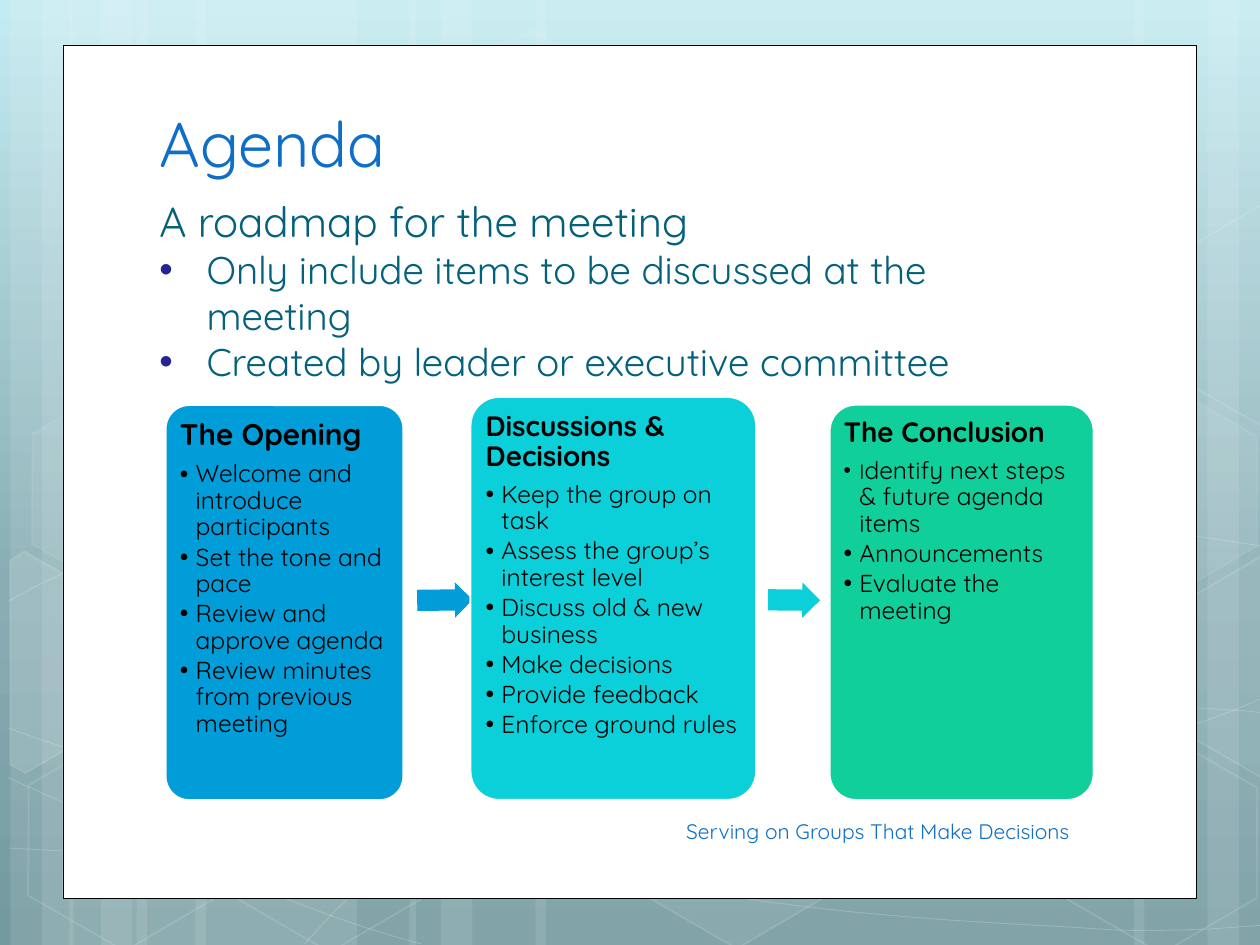
from lxml import etree
from pptx import Presentation
from pptx.dml.color import RGBColor
from pptx.enum.shapes import MSO_SHAPE
from pptx.enum.text import MSO_ANCHOR, PP_ALIGN
from pptx.oxml.ns import qn
from pptx.util import Pt

RECTANGLE, HEXAGON = MSO_SHAPE.RECTANGLE, MSO_SHAPE.HEXAGON
ROUNDED, ARROW = MSO_SHAPE.ROUNDED_RECTANGLE, MSO_SHAPE.RIGHT_ARROW
TOP, MIDDLE, BOTTOM = MSO_ANCHOR.TOP, MSO_ANCHOR.MIDDLE, MSO_ANCHOR.BOTTOM
LEFT, CENTER = PP_ALIGN.LEFT, PP_ALIGN.CENTER
FONT = "Quicksand"
COLORS = {
    "white": "FFFFFF", "black": "000000", "title": "0F6FC6", "body": "04617B",
    "bullet": "242492", "opening": "009DD9", "discussion": "0BD0D9",
    "conclusion": "10CF9B",
}


def paint(shape, fill=None, fill_alpha=100, line=None, width=1, line_alpha=100):
    """Set fill and outline; alphas are percent opacity, None means no paint."""
    shape.shadow.inherit = False
    for target, name, alpha in ((shape.fill, fill, fill_alpha),
                                (shape.line.fill, line, line_alpha)):
        if name is None:
            target.background()
            continue
        target.solid()
        target.fore_color.rgb = RGBColor.from_string(COLORS[name])
        if alpha < 100:
            parent = shape._element.spPr
            if target is not shape.fill:
                parent = parent.find(qn("a:ln"))
            color = parent.find(qn("a:solidFill")).find(qn("a:srgbClr"))
            etree.SubElement(color, qn("a:alpha"), val=str(alpha * 1000))
    if line:
        shape.line.width = Pt(width)


def write(para, text, size, color, bold=False, indent=0, bullet_color=None):
    """Fill a paragraph, with a hanging bullet when an indent is given."""
    para.text = text
    para.alignment = LEFT
    if indent:
        properties = para._p.get_or_add_pPr()
        properties.set("marL", str(Pt(indent)))
        properties.set("indent", str(-Pt(indent)))
        if bullet_color:
            holder = etree.SubElement(properties, qn("a:buClr"))
            etree.SubElement(holder, qn("a:srgbClr"), val=COLORS[bullet_color])
        etree.SubElement(properties, qn("a:buFont"), typeface="Arial")
        etree.SubElement(properties, qn("a:buChar"), char="•")
    for span in para.runs:
        span.font.name = FONT
        span.font.size = Pt(size)
        span.font.bold = bold
        span.font.color.rgb = RGBColor.from_string(COLORS[color])


deck = Presentation()
deck.slide_width, deck.slide_height = Pt(720), Pt(540)
page = deck.slides.add_slide(deck.slide_layouts[5])
shapes = page.shapes

# Background gradient, top to bottom
background = page.background.fill
background.gradient()
background.gradient_angle = 270
stops = page._element.find(".//" + qn("a:gsLst"))
for stop in list(stops):
    stops.remove(stop)
for position, color in ((0, "C4EBF1"), (62, "88ADB3"), (100, "749AA0")):
    stop = etree.SubElement(stops, qn("a:gs"), pos=str(position * 1000))
    etree.SubElement(stop, qn("a:srgbClr"), val=color)

# Translucent vertical stripes
stripes = [(528, 126), (690, 36), (648, 60)]
for start, wide in ((6, 126), (39.6, 126), (234, 222)):
    stripes += [(start + 72, wide), (start, 36), (start + 18, 60)]
for left, width in stripes:
    stripe = shapes.add_shape(RECTANGLE, Pt(left), 0, Pt(width), Pt(540))
    paint(stripe, "white", 10)

# Thin curves: a start point, then Bezier triples
curves = [
    [(5, 484.6), (43.9, 486.7), (82.8, 488.9), (136.8, 488.2), (190.8, 487.4),
     (257.8, 486), (329.8, 478.8), (401.8, 471.6), (504, 457.9), (570.2, 444.2),
     (635.8, 430.6), (703.4, 409), (725, 396.7)],
    [(5, 343.4), (25.9, 331.9), (46.8, 321.1), (87.1, 310.3), (128.2, 299.5),
     (186.5, 283.7), (249.8, 278.6), (313.9, 273.6), (391.7, 272.9),
     (470.9, 278.6), (550.1, 284.4), (681.8, 306.7), (725, 312.5)],
    [(4.3, 444.2), (91.4, 483.8), (177.8, 523.4), (240.5, 539.3)],
    [(5, 416.2), (27.4, 424.1), (50.4, 432), (92.2, 443.5), (133.9, 454.3),
     (196.6, 472.3), (257, 484.6), (316.8, 496.8), (392.4, 509.8), (452.2, 517),
     (511.9, 524.9), (576, 527.8), (614.2, 529.9), (651.6, 532.8),
     (661.7, 531.4), (680.4, 531.4), (699.1, 530.6), (712.1, 529.2), (725, 528.5)],
    [(174.2, 539.3), (187.2, 524.9), (200.2, 510.5), (217.4, 497.5),
     (234.7, 484.6), (259.2, 470.2), (279.4, 460.1), (299.5, 450),
     (311.8, 445.7), (338.4, 438.5), (364.3, 431.3), (412.6, 421.2),
     (437.8, 416.2), (463.7, 411.1), (467.3, 411.1), (489.6, 409.7),
     (511.9, 407.5), (547.2, 405.4), (571.7, 404.6), (596.9, 403.9),
     (637.9, 404.6), (637.9, 404.6), (654, 404.6), (670, 404.6), (686.2, 404.6),
     (699.1, 405.4), (711.4, 406.1), (724.3, 407.5)],
]
for curve in curves:
    points = [(Pt(x), Pt(y)) for x, y in curve]
    builder = shapes.build_freeform(*points[0])
    builder.add_line_segments(points[1:], close=False)
    thread = builder.convert_to_shape()
    outline = thread._element.find(".//" + qn("a:path"))
    segments = outline.findall(qn("a:lnTo"))
    for first in range(0, len(segments), 3):
        bezier = etree.SubElement(outline, qn("a:cubicBezTo"))
        for segment in segments[first:first + 3]:
            bezier.append(segment[0])
            outline.remove(segment)
    paint(thread, line="white", width=0.5, line_alpha=20)

# Hexagons: left, top, fill opacity (0 is unfilled), line opacity
for left, top, fill_alpha, line_alpha in (
        (240.5, 25.9, 4, 8), (357.8, 424.1, 6, 12), (7.9, 425.5, 0, 12),
        (10.1, 224.6, 7, 8), (125.3, 426.2, 0, 12), (542.2, 326.2, 10, 12),
        (600.5, 427, 0, 12), (600.5, 226.1, 7, 8)):
    hexagon = shapes.add_shape(HEXAGON, Pt(left), Pt(top), Pt(126), Pt(109.4))
    hexagon.adjustments[0] = 0.285
    hexagon.rotation = 30
    paint(hexagon, "white" if fill_alpha else None, fill_alpha, "white", 1, line_alpha)

# Hexagons cut by the page edges, drawn upright and then turned
left_cut = [(0, 8.7), (4.2, 0), (68, 0), (99.4, 55.3), (68.1, 109.4), (58.2, 109.4)]
right_cut = [(0, 54.2), (30.6, 0), (37.4, 0), (97.9, 104), (94.5, 109.4), (31.3, 109.4)]
for outline, left, top, fill_alpha in ((left_cut, -23.8, 330.5, 10),
                                       (right_cut, 660.2, 319.7, 4),
                                       (right_cut, 660.2, 118.8, 0)):
    points = [(Pt(left + x), Pt(top + y)) for x, y in outline]
    builder = shapes.build_freeform(*points[0])
    builder.add_line_segments(points[1:], close=True)
    cut_hexagon = builder.convert_to_shape()
    cut_hexagon.rotation = 30
    paint(cut_hexagon, "white" if fill_alpha else None, fill_alpha, "white", 1, 12)

# White panel
panel = shapes.add_shape(RECTANGLE, Pt(36), Pt(26), Pt(648), Pt(487.2))
paint(panel, "white", line="black", width=0.5)

# Title, raised above the panel
title = shapes.title
title._element.getparent().append(title._element)
title.left, title.top, title.width, title.height = Pt(84), Pt(52.6), Pt(553), Pt(54)
title.text_frame.vertical_anchor = BOTTOM
write(title.text_frame.paragraphs[0], "Agenda", 36, "title")

# Footer line
footer = shapes.add_textbox(Pt(362), Pt(460.8), Pt(279.4), Pt(28.8)).text_frame
footer.word_wrap = True
footer.vertical_anchor = MIDDLE
write(footer.paragraphs[0], "Serving on Groups That Make Decisions", 12, "title")
footer.paragraphs[0].alignment = CENTER

# Cards, each followed by its arrow: left, width, angle
cards = [
    ("opening", "The Opening", 17, 4.3, (94.6, 231.4, 136, 225.9), (238.4, 31.7, 359.3),
     ["Welcome and introduce participants", "Set the tone and pace",
      "Review and approve agenda", "Review minutes from previous meeting"]),
    ("discussion", "Discussions & Decisions", 16, 4, (268.8, 226.8, 163.4, 230.4),
     (438.9, 29.7, 0.6),
     ["Keep the group on task", "Assess the group’s interest level",
      "Discuss old & new business", "Make decisions", "Provide feedback",
      "Enforce ground rules"]),
    ("conclusion", "The Conclusion", 16, 3.6, (474, 231.2, 151, 226), None,
     ["Identify next steps & future agenda items", "Announcements",
      "Evaluate the meeting"]),
]
for color, heading, size, margin, bounds, arrow_place, items in cards:
    card = shapes.add_shape(ROUNDED, *map(Pt, bounds))
    card.adjustments[0] = 0.1
    paint(card, color, line="white", width=1.25)
    frame = card.text_frame
    frame.word_wrap = True
    frame.vertical_anchor = TOP
    frame.margin_left = frame.margin_right = Pt(margin)
    frame.margin_top = frame.margin_bottom = Pt(margin)
    write(frame.paragraphs[0], heading, size, "black", bold=True)
    frame.paragraphs[0].space_after = Pt(round(size * 0.34, 1))
    for item in items:
        para = frame.add_paragraph()
        write(para, item, 14, "black", indent=9)
        para.space_after = Pt(2.1)
    for para in frame.paragraphs:
        para.line_spacing = 0.9
    if arrow_place:
        left, width, angle = arrow_place
        arrow = shapes.add_shape(ARROW, Pt(left), Pt(332.8), Pt(width), Pt(20.2))
        arrow.adjustments[0] = 0.6
        arrow.rotation = angle
        paint(arrow, color)

# The conclusion's first bullet opens with a smaller initial
para = frame.paragraphs[1]
write(para, "I", 12, "black")
rest = para.add_run()
rest.text = items[0][1:]
rest.font.name, rest.font.size, rest.font.bold = FONT, Pt(14), False
rest.font.color.rgb = RGBColor.from_string(COLORS["black"])

# Introductory text
intro = shapes.add_textbox(Pt(84), Pt(108), Pt(540), Pt(116.6)).text_frame
intro.word_wrap = True
write(intro.paragraphs[0], "A roadmap for the meeting", 24, "body")
for item in ("Only include items to be discussed at the meeting",
             "Created by leader or executive committee"):
    write(intro.add_paragraph(), item, 22, "body", indent=27, bullet_color="bullet")

deck.save("out.pptx")
